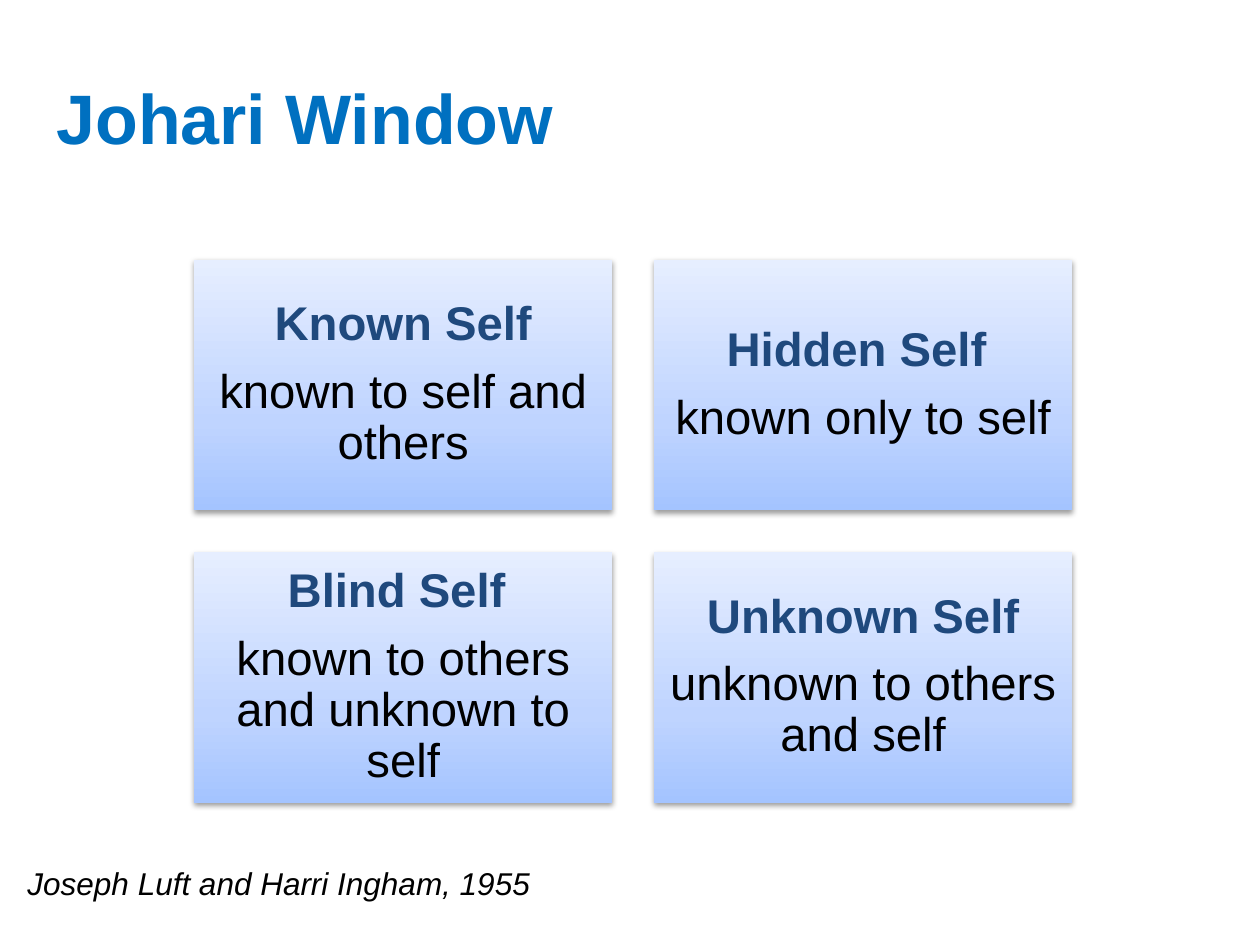
"""Build the Johari Window slide: a title, a two by two grid and a credit line."""
from pptx import Presentation
from pptx.dml.color import RGBColor as Rgb
from pptx.enum.shapes import MSO_SHAPE as Shape
from pptx.enum.text import MSO_ANCHOR as Anchor, PP_ALIGN as Align
from pptx.oxml import parse_xml
from pptx.oxml.ns import nsdecls
from pptx.util import Inches, Pt

TITLE = "Johari Window"
CREDIT = "Joseph Luft and Harri Ingham, 1955"
PANES = [
    [("Known Self", "known to self and others"),
     ("Hidden Self ", "known only to self")],
    [("Blind Self ", "known to others and unknown to self"),
     ("Unknown Self", "unknown to others and self")],
]
THEME = {
    "font": "Arial",
    "title": (40, "0070C0"), "head": (27, "1F497D"),
    "body": (27, "000000"), "credit": (18, "000000"),
    "stops": [(0, "A4C4FF"), (35, "BFD4FF"), (100, "E6EEFF")],
}
WIDE, HIGH = 10, 7.5
GRID = {"left": 1.54, "top": 2.06, "wide": 3.32, "high": 1.99, "gap": 0.33}


def style(para, text, role, bold=False, italic=False):
    size, color = THEME[role]
    para.text = text
    font = para.font
    font.name, font.size = THEME["font"], Pt(size)
    font.bold, font.italic = bold, italic
    font.color.rgb = Rgb.from_string(color)


def label(slide, box, text, role, wrap=True, **look):
    frame = slide.shapes.add_textbox(*map(Inches, box)).text_frame
    frame.word_wrap = wrap
    frame.vertical_anchor = Anchor.MIDDLE
    style(frame.paragraphs[0], text, role, **look)


def paint(pane):
    stops = "".join(
        f'<a:gs pos="{pos * 1000}"><a:srgbClr val="{color}"/></a:gs>'
        for pos, color in THEME["stops"])
    props = pane._element.spPr
    props.append(parse_xml(
        f'<a:gradFill {nsdecls("a")} rotWithShape="1"><a:gsLst>{stops}</a:gsLst>'
        '<a:lin ang="16200000" scaled="0"/></a:gradFill>'))
    pane.line.fill.background()
    props.append(parse_xml(
        f'<a:effectLst {nsdecls("a")}>'
        '<a:outerShdw blurRad="40000" dist="20000" dir="5400000" rotWithShape="0">'
        '<a:srgbClr val="000000"><a:alpha val="38000"/></a:srgbClr>'
        '</a:outerShdw></a:effectLst>'))


def add_pane(slide, row, col, head, body):
    wide, high, gap = GRID["wide"], GRID["high"], GRID["gap"]
    box = (GRID["left"] + col * (wide + gap),
           GRID["top"] + row * (high + gap), wide, high)
    pane = slide.shapes.add_shape(Shape.RECTANGLE, *map(Inches, box))
    paint(pane)
    frame = pane.text_frame
    frame.word_wrap = True
    frame.vertical_anchor = Anchor.MIDDLE
    frame.margin_left = frame.margin_right = Inches(0.11)
    frame.margin_top = frame.margin_bottom = Inches(0.11)
    style(frame.paragraphs[0], head, "head", bold=True)
    style(frame.add_paragraph(), body, "body")
    for para in frame.paragraphs:
        para.alignment = Align.CENTER
        para.line_spacing = 0.9
        para.space_after = Pt(0.35 * THEME["body"][0])


def main():
    deck = Presentation()
    deck.slide_width, deck.slide_height = Inches(WIDE), Inches(HIGH)
    slide = deck.slides.add_slide(deck.slide_layouts[6])
    label(slide, (0.35, 0.3, 0.9 * WIDE, 1.25), TITLE, "title", bold=True)
    for row, line in enumerate(PANES):
        for col, (head, body) in enumerate(line):
            add_pane(slide, row, col, head, body)
    label(slide, (0.12, 6.81, 4.23, 0.4), CREDIT, "credit", wrap=False, italic=True)
    deck.save("out.pptx")


if __name__ == "__main__":
    main()
